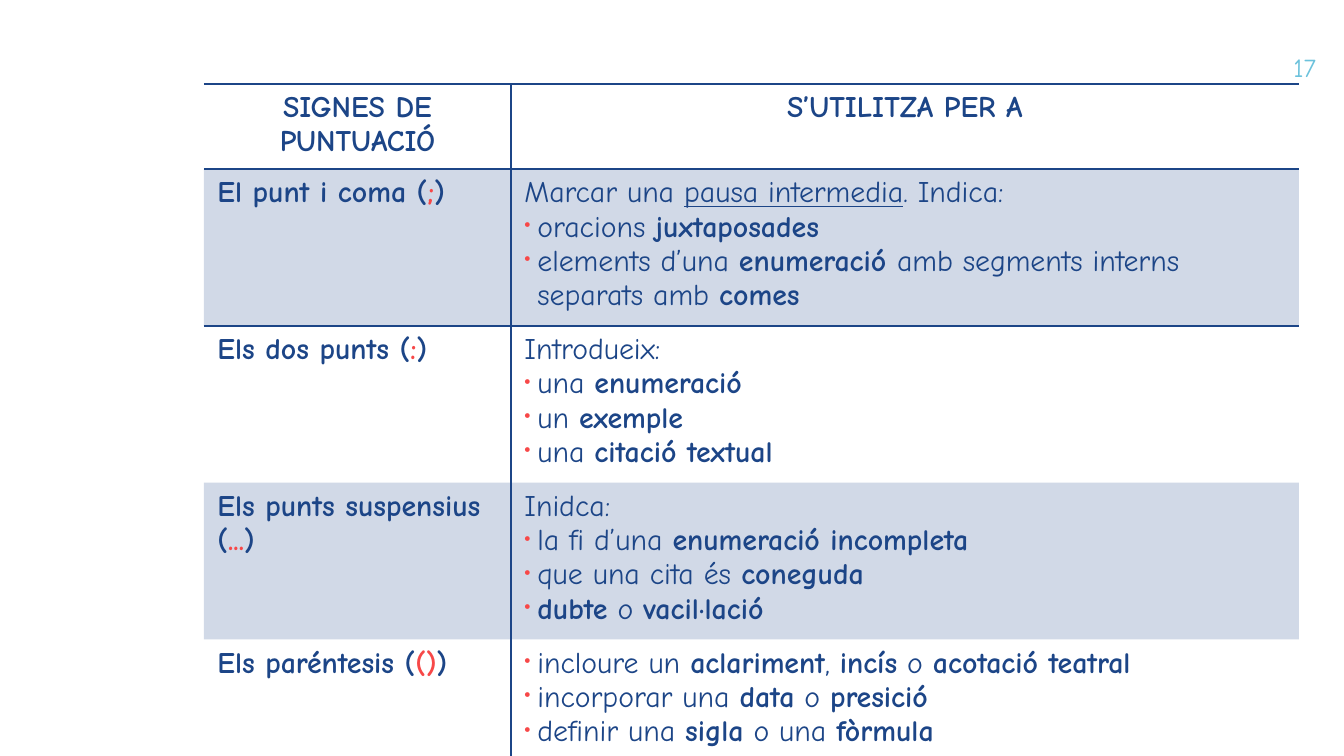
from lxml import etree
from pptx import Presentation
from pptx import util as u
from pptx.dml.color import RGBColor
from pptx.enum import text
from pptx.oxml import ns

PX = 914400 / 134.4
COLORS = {"navy": "1C4587", "red": "F74848", "sky": "6CC2DC"}
NO_GRID = "{2D5ABB26-0587-4C30-8999-92F81FD0307C}"


def px(n):
    return u.Emu(round(n * PX))


def run(words, **fmt):
    return words, fmt


def emphasis(marked):
    return [run(part, bold=i % 2 == 1)
            for i, part in enumerate(marked.split("*")) if part]


def sign(name, mark):
    return [run(f"{name} (", bold=True), run(mark, bold=True, color="red"),
            run(")", bold=True)]


def child(parent, tag, **attrs):
    return etree.SubElement(parent, ns.qn(tag), **attrs)


class Deck:
    font = "Comic Neue"

    def __init__(self, width, height):
        self.prs = Presentation()
        self.prs.slide_width, self.prs.slide_height = px(width), px(height)
        self.s = self.prs.slides.add_slide(self.prs.slide_layouts[6])

    def add_text(self, p, words, size=16, color="navy", bold=False, underline=False):
        r = p.add_run()
        r.text = words
        f = r.font
        f.name, f.size, f.bold = self.font, u.Pt(size), bold
        if underline:
            f.underline = True
        f.color.rgb = RGBColor.from_string(COLORS[color])

    def bullet(self, p):
        pPr = p._p.get_or_add_pPr()
        pPr.set("marL", str(px(13)))
        pPr.set("indent", str(px(-13)))
        child(child(pPr, "a:buClr"), "a:srgbClr", val=COLORS["red"])
        child(pPr, "a:buSzPct", val="61000")
        child(pPr, "a:buChar", char="•")

    def label(self, x, y, w, h, words, **fmt):
        tf = self.s.shapes.add_textbox(px(x), px(y), px(w), px(h)).text_frame
        tf.word_wrap = True
        tf.margin_left = tf.margin_right = tf.margin_top = tf.margin_bottom = 0
        tf.vertical_anchor = text.MSO_ANCHOR.MIDDLE
        p = tf.paragraphs[0]
        p.alignment = text.PP_ALIGN.RIGHT
        self.add_text(p, words, **fmt)

    def table(self, x, y, widths, heights):
        frame = self.s.shapes.add_table(len(heights), len(widths), px(x), px(y),
                                        px(sum(widths)), px(sum(heights)))
        table = frame.table
        table.first_row = table.horz_banding = False
        table._tbl.tblPr.find(ns.qn("a:tableStyleId")).text = NO_GRID
        for column, w in zip(table.columns, widths):
            column.width = px(w)
        for row, h in zip(table.rows, heights):
            row.height = px(h)
        return table

    def cell(self, cell, paragraphs, borders, shaded=False, centered=False):
        tf = cell.text_frame
        for i, (runs, bulleted) in enumerate(paragraphs):
            p = tf.add_paragraph() if i else tf.paragraphs[0]
            if centered:
                p.alignment = text.PP_ALIGN.CENTER
            if bulleted:
                self.bullet(p)
            for words, fmt in runs:
                self.add_text(p, words, **fmt)
        tcPr = cell._tc.get_or_add_tcPr()
        for side in "LRTB":
            if side in borders:
                ln = child(tcPr, f"a:ln{side}", w=str(u.Pt(1)))
                child(child(ln, "a:solidFill"), "a:srgbClr", val=COLORS["navy"])
        if shaded:
            fill = child(child(tcPr, "a:solidFill"), "a:srgbClr", val=COLORS["navy"])
            child(fill, "a:alpha", val="20000")
        else:
            child(tcPr, "a:noFill")


ROWS = [
    (sign("El punt i coma", ";"),
     [run("Marcar una "), run("pausa intermedia", underline=True), run(". Indica:")],
     ["oracions *juxtaposades*",
      "elements d’una *enumeració *amb segments interns separats amb *comes*"]),
    (sign("Els dos punts", ":"), [run("Introdueix:")],
     ["una *enumeració*", "un *exemple*", "una *citació textual*"]),
    (sign("Els punts suspensius", "..."), [run("Inidca:")],
     ["la fi d’una *enumeració incompleta*", "que una cita és *coneguda*",
      "*dubte* o *vacil·lació*"]),
    (sign("Els paréntesis", "()"), None,
     ["incloure un *aclariment*, *incís* o *acotació teatral*",
      "incorporar una *data* o *presició*",
      "definir una *sigla* o una *fòrmula*"]),
]


def main():
    deck = Deck(1344, 756)
    deck.label(1235, 38, 81, 58, "17", size=14, color="sky")
    table = deck.table(204, 84, [307, 788], [82, 151, 151, 150, 117])
    headings = ["SIGNES DE PUNTUACIÓ", "S’UTILITZA PER A"]
    for col, (heading, side) in enumerate(zip(headings, "RL")):
        deck.cell(table.cell(0, col), [([run(heading, bold=True)], False)],
                  side + "TB", centered=True)
    for row, (name, intro, uses) in enumerate(ROWS, 1):
        shaded = row % 2 == 1
        edge = "B" if row == len(ROWS) else ""
        edge += "T" if row == 1 else ""
        body = [(intro, False)] if intro else []
        body += [(emphasis(use), True) for use in uses]
        deck.cell(table.cell(row, 0), [(name, False)], "R" + edge, shaded)
        deck.cell(table.cell(row, 1), body, "L" + edge, shaded)
    deck.prs.save("out.pptx")


if __name__ == "__main__":
    main()
